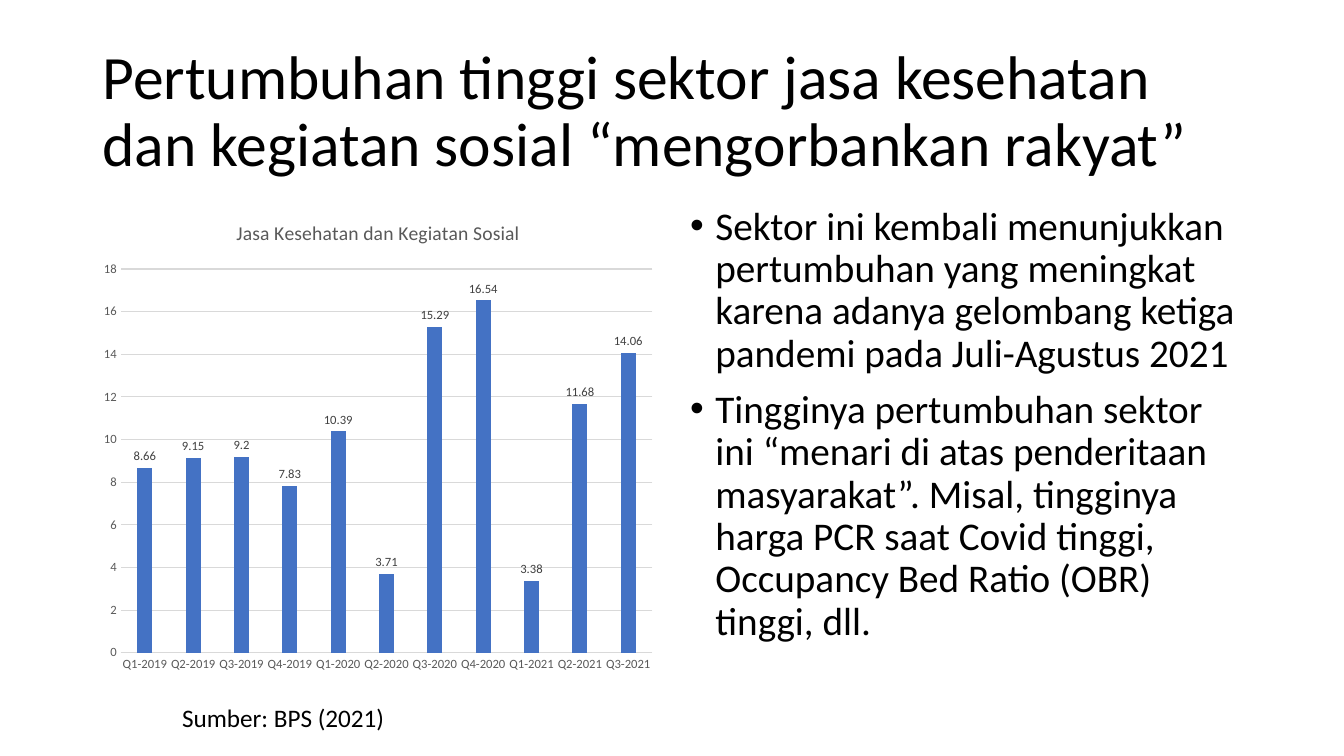
from lxml.etree import SubElement
from pptx import Presentation
from pptx.chart.data import CategoryChartData
from pptx.dml.color import RGBColor
from pptx.enum.chart import XL_CHART_TYPE, XL_LABEL_POSITION, XL_TICK_MARK
from pptx.enum.text import MSO_ANCHOR, MSO_AUTO_SIZE, PP_ALIGN
from pptx.oxml.ns import qn
from pptx.util import Cm, Pt

FACE = "Calibri"
TITLE = "Pertumbuhan tinggi sektor jasa kesehatan dan kegiatan sosial “mengorbankan rakyat”"
POINTS = [
    "Sektor ini kembali menunjukkan pertumbuhan yang meningkat karena adanya "
    "gelombang ketiga pandemi pada Juli-Agustus 2021",
    "Tingginya pertumbuhan sektor ini “menari di atas penderitaan masyarakat”. "
    "Misal, tingginya harga PCR saat Covid tinggi, Occupancy Bed Ratio (OBR) tinggi, dll.",
]
SECTOR = "Jasa Kesehatan dan Kegiatan Sosial"
GROWTH = {
    "Q1-2019": 8.66, "Q2-2019": 9.15, "Q3-2019": 9.2, "Q4-2019": 7.83,
    "Q1-2020": 10.39, "Q2-2020": 3.71, "Q3-2020": 15.29, "Q4-2020": 16.54,
    "Q1-2021": 3.38, "Q2-2021": 11.68, "Q3-2021": 14.06,
}


def color(code):
    """Turn a hex string into a colour."""
    return RGBColor.from_string(code)


def style(font, size, code):
    """Set the face, size and colour of a font."""
    font.name, font.size, font.bold = FACE, Pt(size), False
    font.color.rgb = color(code)


def write(frame, lines, size=18, code="000000", space=1.0, before=0, bullet=False):
    """Fill a text frame with one formatted paragraph per line."""
    frame.word_wrap = True
    frame.auto_size = MSO_AUTO_SIZE.NONE
    for index, line in enumerate(lines):
        para = frame.add_paragraph() if index else frame.paragraphs[0]
        para.alignment = PP_ALIGN.LEFT
        para.line_spacing, para.space_before = space, Pt(before)
        run = para.add_run()
        run.text = line
        style(run.font, size, code)
        if bullet:
            props = para._p.get_or_add_pPr()
            indent = Cm(0.64)
            props.set("marL", str(indent))
            props.set("indent", str(-indent))
            SubElement(props, qn("a:buFont"), typeface="Arial")
            SubElement(props, qn("a:buChar"), char="•")


def head(slide, left, top, width, height):
    """Place the slide title."""
    title = slide.shapes.title
    title.left, title.top, title.width, title.height = left, top, width, height
    title.text_frame.vertical_anchor = MSO_ANCHOR.MIDDLE
    write(title.text_frame, [TITLE], size=44, space=0.9)


def points(slide, *box):
    """Place the bulleted points."""
    frame = slide.shapes.add_textbox(*box).text_frame
    write(frame, POINTS, size=28, space=0.9, before=10, bullet=True)


def source(slide, *box):
    """Place the source of the data."""
    write(slide.shapes.add_textbox(*box).text_frame, ["Sumber: BPS (2021)"])


def rule(line):
    """Draw a chart line thin and grey."""
    line.color.rgb = color("D9D9D9")
    line.width = Pt(0.75)


def graph(slide, *box):
    """Place the column chart of quarterly growth."""
    data = CategoryChartData()
    data.categories = list(GROWTH)
    data.add_series(SECTOR, list(GROWTH.values()))
    chart = slide.shapes.add_chart(XL_CHART_TYPE.COLUMN_CLUSTERED, *box, data).chart
    style(chart.font, 10, "000000")
    chart.has_legend = False
    chart.has_title = True
    write_title = chart.chart_title.text_frame
    write_title.text = SECTOR
    style(write_title.paragraphs[0].runs[0].font, 14, "595959")
    chart.chart_title.include_in_layout = False

    for axis in (chart.category_axis, chart.value_axis):
        axis.major_tick_mark = axis.minor_tick_mark = XL_TICK_MARK.NONE
        style(axis.tick_labels.font, 9, "595959")
    rule(chart.category_axis.format.line)
    chart.value_axis.format.line.fill.background()
    rule(chart.value_axis.major_gridlines.format.line)

    plot = chart.plots[0]
    plot.vary_by_categories = False
    plot.gap_width, plot.overlap = 219, -27
    bars = plot.series[0]
    bars.format.fill.solid()
    bars.format.fill.fore_color.rgb = color("4472C4")
    labels = bars.data_labels
    labels.show_value = True
    labels.position = XL_LABEL_POSITION.OUTSIDE_END
    style(labels.font, 9, "404040")


def main():
    """Build and save the slide."""
    deck = Presentation()
    deck.slide_width, deck.slide_height = Cm(33.87), Cm(19.05)
    slide = deck.slides.add_slide(deck.slide_layouts[5])
    left, top, width, height = Cm(2.33), Cm(5.07), Cm(14.4), Cm(12.09)
    gap = Cm(0.41)
    head(slide, left, Cm(1.01), 2 * width + gap, Cm(3.68))
    graph(slide, left, top, width, height)
    points(slide, left + width + gap, top, width, height)
    source(slide, left + Cm(2.01), top + height + gap, Cm(6.88), Cm(1.02))
    deck.save("out.pptx")


if __name__ == "__main__":
    main()
